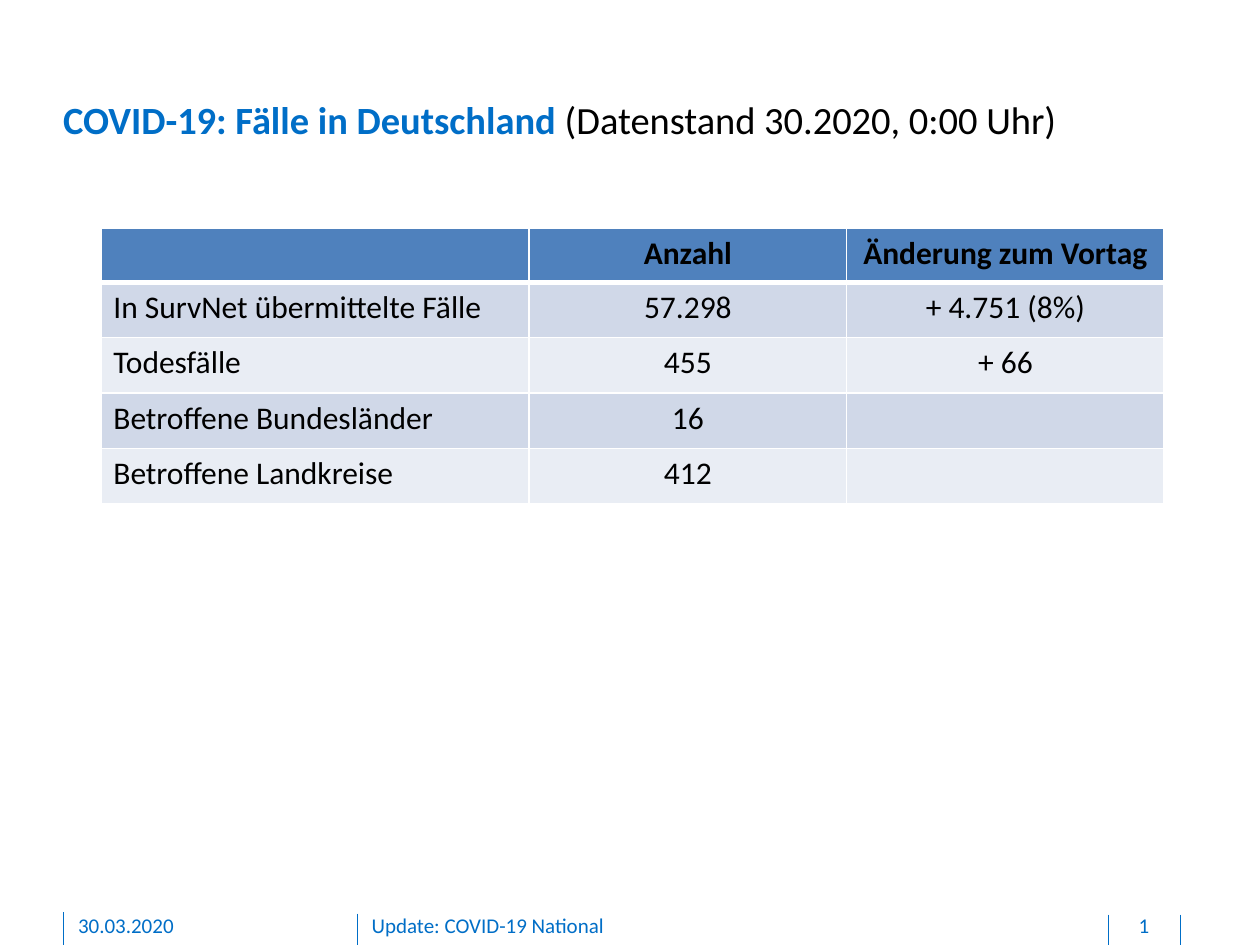
import pptx
import pptx.dml.color
import pptx.enum.shapes
import pptx.enum.text
import pptx.oxml
import pptx.oxml.ns
import pptx.util
from pptx.util import Inches

COLORS = {
    "blue": "006EC7", "black": "000000", "white": "FFFFFF",
    "header": "4F81BD", "odd_row": "D0D8E8", "even_row": "E9EDF4",
}
FONT = "Calibri"
LEFT = pptx.enum.text.PP_ALIGN.LEFT
CENTER = pptx.enum.text.PP_ALIGN.CENTER

TITLE = [("COVID-19: Fälle in Deutschland ", "blue", True),
         ("(Datenstand 30.2020, 0:00 Uhr)", "black", False)]
CASES = [
    ("", "Anzahl", "Änderung zum Vortag"),
    ("In SurvNet übermittelte Fälle", "57.298", "+ 4.751 (8%)"),
    ("Todesfälle", "455", "+ 66"),
    ("Betroffene Bundesländer", "16", ""),
    ("Betroffene Landkreise", "412", ""),
]
COLUMN_WIDTHS = (3.4, 2.52, 2.52)
ROW_HEIGHTS = (0.43, 0.44, 0.44, 0.44, 0.44)
# text, left, width, alignment
FOOTER = [("30.03.2020", 0.62, 2.03, LEFT),
          ("Update: COVID-19 National", 2.95, 5.67, LEFT),
          ("1", 8.81, 0.54, CENTER)]
# x, top
FOOTER_LINES = [(2.84, 7.25), (0.5, 7.24), (9.37, 7.26), (8.8, 7.26)]
PAGE_HEIGHT = 7.5


def rgb(name):
    return pptx.dml.color.RGBColor.from_string(COLORS[name])


def add_span(para, text, size, color, bold=False):
    span = para.add_run()
    span.text = text
    span.font.name = FONT
    span.font.size = pptx.util.Pt(size)
    span.font.bold = bold
    span.font.color.rgb = rgb(color)


def add_text(page, place, spans, size, align=LEFT, bottom_inset=0):
    box = page.shapes.add_textbox(*map(Inches, place))
    frame = box.text_frame
    frame.word_wrap = True
    frame.margin_left = frame.margin_top = frame.margin_right = 0
    frame.margin_bottom = Inches(bottom_inset)
    para = frame.paragraphs[0]
    para.alignment = align
    for text, color, bold in spans:
        add_span(para, text, size, color, bold)


def add_footer_line(page, x, top):
    line = page.shapes.add_connector(
        pptx.enum.shapes.MSO_CONNECTOR.STRAIGHT,
        Inches(x), Inches(top), Inches(x), Inches(PAGE_HEIGHT))
    line.line.color.rgb = rgb("blue")
    line.line.width = pptx.util.Pt(0.5)
    properties = line._element.spPr
    properties.append(properties.makeelement(pptx.oxml.ns.qn("a:effectLst"), {}))


def set_borders(cell, widths):
    """Draw white borders; widths maps the sides L, R, T, B to points."""
    properties = cell._tc.get_or_add_tcPr()
    for side, width in widths.items():
        properties.append(pptx.oxml.parse_xml(
            f'<a:ln{side} {pptx.oxml.ns.nsdecls("a")} w="{pptx.util.Pt(width)}">'
            f'<a:solidFill><a:srgbClr val="{COLORS["white"]}"/></a:solidFill>'
            f'</a:ln{side}>'))


def add_case_table(page):
    table = page.shapes.add_table(
        len(CASES), len(COLUMN_WIDTHS), Inches(0.8), Inches(1.81),
        Inches(sum(COLUMN_WIDTHS)), Inches(sum(ROW_HEIGHTS))).table
    for column, width in zip(table.columns, COLUMN_WIDTHS):
        column.width = Inches(width)
    for row, height in zip(table.rows, ROW_HEIGHTS):
        row.height = Inches(height)
    for r, values in enumerate(CASES):
        is_header = r == 0
        fill = "header" if is_header else "odd_row" if r % 2 else "even_row"
        borders = {"L": 1, "R": 1, "T": 3 if r == 1 else 1, "B": 3 if is_header else 1}
        for c, value in enumerate(values):
            cell = table.cell(r, c)
            set_borders(cell, borders)
            cell.fill.solid()
            cell.fill.fore_color.rgb = rgb(fill)
            para = cell.text_frame.paragraphs[0]
            para.alignment = CENTER if c else LEFT
            if value:
                add_span(para, value, 18, "black", is_header)


def main():
    deck = pptx.Presentation()
    deck.slide_width = Inches(10)
    deck.slide_height = Inches(PAGE_HEIGHT)
    page = deck.slides.add_slide(deck.slide_layouts[6])
    for x, top in FOOTER_LINES:
        add_footer_line(page, x, top)
    add_text(page, (0.5, 0.76, 8.85, 0.37), TITLE, 22)
    for text, left, width, align in FOOTER:
        add_text(page, (left, 7.24, width, 0.21), [(text, "blue", False)], 12, align, 0.05)
    add_case_table(page)
    deck.save("out.pptx")


if __name__ == "__main__":
    main()
